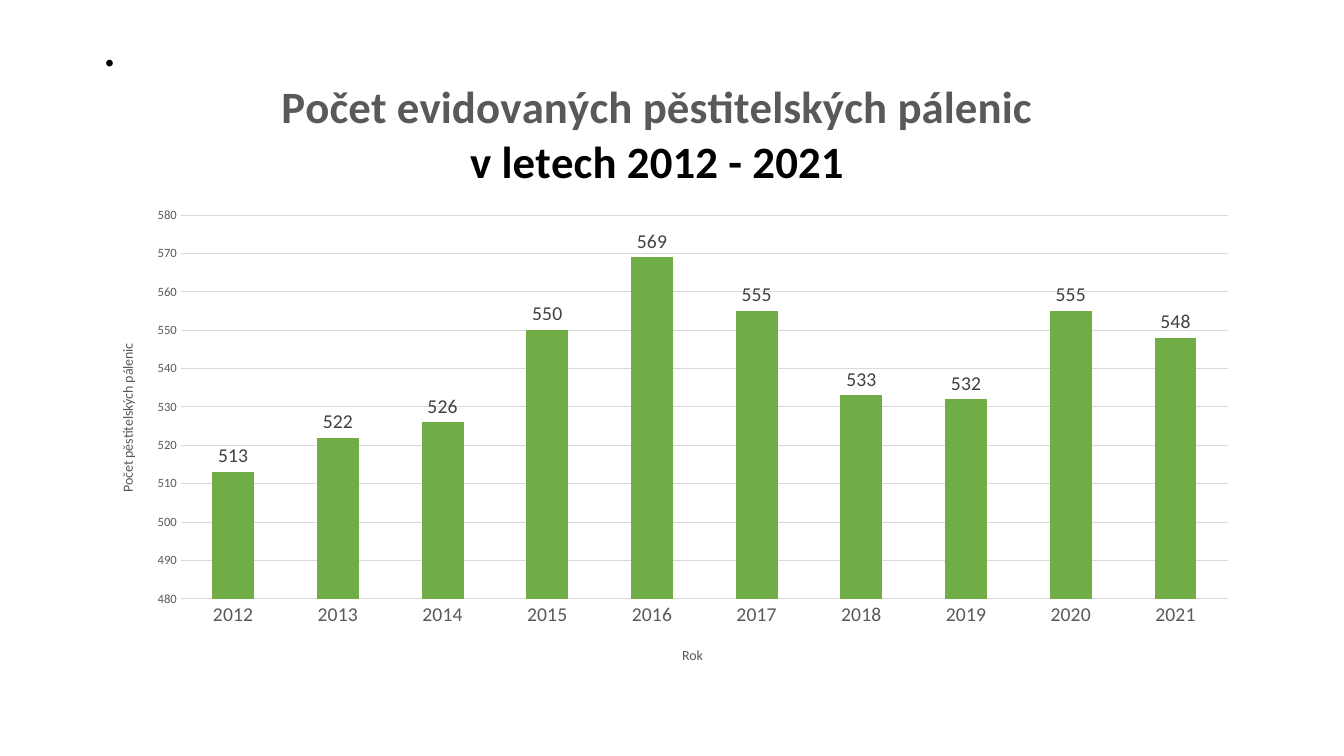
from pptx import Presentation
from pptx.chart.data import CategoryChartData
from pptx.dml.color import RGBColor
from pptx.enum.chart import XL_CHART_TYPE, XL_LABEL_POSITION, XL_TICK_MARK
from pptx.enum.text import MSO_ANCHOR
from pptx.oxml import parse_xml
from pptx.oxml.ns import nsdecls, qn
from pptx.util import Inches, Pt

COLUMNS = XL_CHART_TYPE.COLUMN_CLUSTERED
ABOVE_BAR = XL_LABEL_POSITION.OUTSIDE_END
NO_TICK = XL_TICK_MARK.NONE
MIDDLE = MSO_ANCHOR.MIDDLE

BLACK = RGBColor(0x00, 0x00, 0x00)
GRAY = RGBColor(0x59, 0x59, 0x59)
DARK_GRAY = RGBColor(0x40, 0x40, 0x40)
GRID_GRAY = RGBColor(0xD9, 0xD9, 0xD9)
GREEN = RGBColor(0x70, 0xAD, 0x47)
FONT = "Calibri"

FIRST_YEAR = 2012
DISTILLERIES = (513, 522, 526, 550, 569, 555, 533, 532, 555, 548)


def set_font(font, size, color, bold=False):
    font.name = FONT
    font.size = Pt(size)
    font.bold = bold
    font.color.rgb = color


def write_text(paragraph, text, size=10, color=GRAY, bold=False):
    run = paragraph.add_run()
    run.text = text
    set_font(run.font, size, color, bold)


def make_layout(x, y, w=None, h=None):
    """Manual chart layout, in fractions of the chart area."""
    target = "" if w is None else '<c:layoutTarget val="inner"/>'
    modes = '<c:xMode val="edge"/><c:yMode val="edge"/>'
    sides = "".join(f'<c:{side} val="{value}"/>'
                    for side, value in zip("xywh", (x, y, w, h))
                    if value is not None)
    return parse_xml(f'<c:layout {nsdecls("c")}><c:manualLayout>'
                     f'{target}{modes}{sides}</c:manualLayout></c:layout>')


def replace_layout(parent, layout, index):
    for old in parent.findall(qn("c:layout")):
        parent.remove(old)
    parent.insert(index, layout)


def place_title(title, x, y):
    replace_layout(title._element, make_layout(x, y), 1)


def add_slide_title(slide):
    box = slide.shapes.add_textbox(Inches(0.92), Inches(0.4), Inches(11.5), Inches(0.16))
    frame = box.text_frame
    frame.word_wrap = True
    frame.vertical_anchor = MIDDLE
    frame.paragraphs[0].line_spacing = 0.9
    write_text(frame.paragraphs[0], ".", size=39.6, color=BLACK)


def add_chart_title(chart):
    frame = chart.chart_title.text_frame
    write_text(frame.paragraphs[0], "Počet evidovaných pěstitelských pálenic",
               size=32, bold=True)
    write_text(frame.add_paragraph(), "v letech 2012 - 2021",
               size=32, color=BLACK, bold=True)
    place_title(chart.chart_title, 0.16, 0.03)


def style_axis(axis, title, size, x, y):
    axis.major_tick_mark = axis.minor_tick_mark = NO_TICK
    set_font(axis.tick_labels.font, size, GRAY)
    axis.format.line.fill.background()
    write_text(axis.axis_title.text_frame.paragraphs[0], title)
    place_title(axis.axis_title, x, y)


def add_distillery_chart(slide):
    data = CategoryChartData()
    data.categories = [str(FIRST_YEAR + i) for i in range(len(DISTILLERIES))]
    data.add_series("Series 1", DISTILLERIES)
    chart = slide.shapes.add_chart(COLUMNS, Inches(0.92), Inches(0.56),
                                   Inches(11.5), Inches(6.2), data).chart
    set_font(chart.font, 10, BLACK)
    chart.has_legend = False
    add_chart_title(chart)
    replace_layout(chart.plots[0]._element.getparent(),
                   make_layout(0.076, 0.254, 0.903, 0.614), 0)

    # Axes
    years, counts = chart.category_axis, chart.value_axis
    style_axis(years, "Rok", 14, 0.506, 0.94)
    style_axis(counts, "Počet pěstitelských pálenic", 9, 0.02, 0.455)
    rotation = counts.axis_title.text_frame._txBody.find(qn("a:bodyPr"))
    rotation.set("rot", "-5400000")
    rotation.set("vert", "horz")
    counts.minimum_scale, counts.maximum_scale, counts.major_unit = 480, 580, 10
    grid = counts.major_gridlines.format.line
    grid.color.rgb = GRID_GRAY
    grid.width = Pt(0.75)

    # Columns and their values
    plot = chart.plots[0]
    plot.gap_width = 150
    plot.vary_by_categories = False
    columns = plot.series[0]
    columns.format.fill.solid()
    columns.format.fill.fore_color.rgb = GREEN
    labels = columns.data_labels
    labels.show_value = True
    labels.position = ABOVE_BAR
    set_font(labels.font, 14, DARK_GRAY)


def main():
    deck = Presentation()
    deck.slide_width, deck.slide_height = Inches(13.33), Inches(7.5)
    slide = deck.slides.add_slide(deck.slide_layouts[6])
    add_slide_title(slide)
    add_distillery_chart(slide)
    deck.save("out.pptx")


if __name__ == "__main__":
    main()
